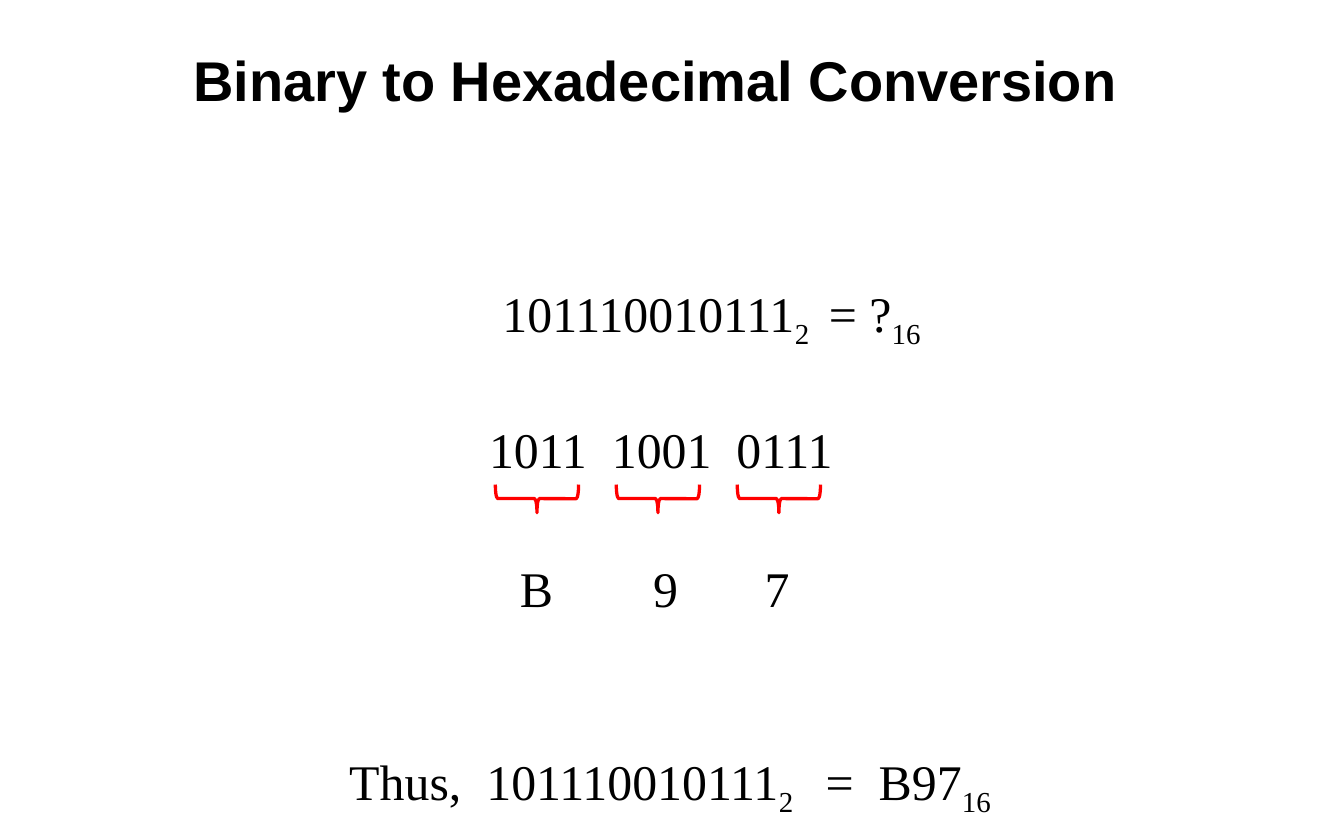
"""Build a slide that converts a binary number to hexadecimal."""
from dataclasses import dataclass

from lxml import etree
from pptx import Presentation
from pptx import util as u
from pptx.dml.color import RGBColor
from pptx.enum import shapes, text
from pptx.oxml.ns import qn

SERIF = "Times New Roman"
BLACK, RED = "000000", "FF0000"
SUBSCRIPT = "-25000"


@dataclass(frozen=True)
class Run:
    text: str
    sub: bool = False


@dataclass(frozen=True)
class Line:
    left: float
    top: float
    width: float
    runs: tuple[Run, ...]
    height: float = 0.55
    font: str = SERIF
    size: float = 26.7
    bold: bool = False
    align: text.PP_ALIGN = text.PP_ALIGN.LEFT
    tabs: tuple[float, ...] = ()


LINES = (
    Line(0, 0.28, 9.75, (Run("Binary to Hexadecimal Conversion"),), height=0.62,
         font="Arial", size=30, bold=True, align=text.PP_ALIGN.CENTER),
    Line(3.64, 2.08, 3.49,
         (Run("101110010111"), Run("2 ", True), Run(" = ?"), Run("16", True))),
    Line(3.54, 3.06, 2.78, (Run("1011  1001  0111"),)),
    Line(3.77, 4.1, 2.55, (Run("B\t9\t7"),), tabs=(0.99, 1.82)),
    Line(2.5, 5.56, 5.25,
         (Run("Thus,  101110010111"), Run("2 ", True), Run("  =  B97"), Run("16", True))),
)

BRACE_LEFT, BRACE_TOP, BRACE_STEP = 3.89, 3.4, 0.9
BRACE_WIDTH, BRACE_HEIGHT = 0.21, 0.62
GROUPS = 3


def color(value: str) -> RGBColor:
    return RGBColor.from_string(value)


def add_line(s, line: Line) -> None:
    sp = s.shapes.add_textbox(u.Inches(line.left), u.Inches(line.top),
                              u.Inches(line.width), u.Inches(line.height))
    tf = sp.text_frame
    tf.word_wrap = True
    tf.vertical_anchor = text.MSO_ANCHOR.MIDDLE
    p = tf.paragraphs[0]
    p.alignment = line.align
    p.font.name = line.font
    p.font.size = u.Pt(line.size)
    p.font.bold = line.bold
    p.font.color.rgb = color(BLACK)
    if line.tabs:
        stops = etree.Element(qn("a:tabLst"))
        for pos in line.tabs:
            etree.SubElement(stops, qn("a:tab"), pos=str(u.Inches(pos)), algn="l")
        p._p.get_or_add_pPr().insert(0, stops)
    for run in line.runs:
        r = p.add_run()
        r.text = run.text
        if run.sub:
            r._r.get_or_add_rPr().set("baseline", SUBSCRIPT)


def add_brace(s, left: float) -> None:
    sp = s.shapes.add_shape(shapes.MSO_SHAPE.RIGHT_BRACE, u.Inches(left), u.Inches(BRACE_TOP),
                            u.Inches(BRACE_WIDTH), u.Inches(BRACE_HEIGHT))
    sp.rotation = 90
    sp.shadow.inherit = False
    sp.fill.background()
    sp.line.color.rgb = color(RED)
    sp.line.width = u.Pt(1.75)


def main() -> None:
    prs = Presentation()
    prs.slide_width, prs.slide_height = u.Inches(10), u.Inches(6.25)
    s = prs.slides.add_slide(prs.slide_layouts[6])
    for line in LINES:
        add_line(s, line)
    for i in range(GROUPS):
        add_brace(s, BRACE_LEFT + i * BRACE_STEP)
    prs.save("out.pptx")


if __name__ == "__main__":
    main()
